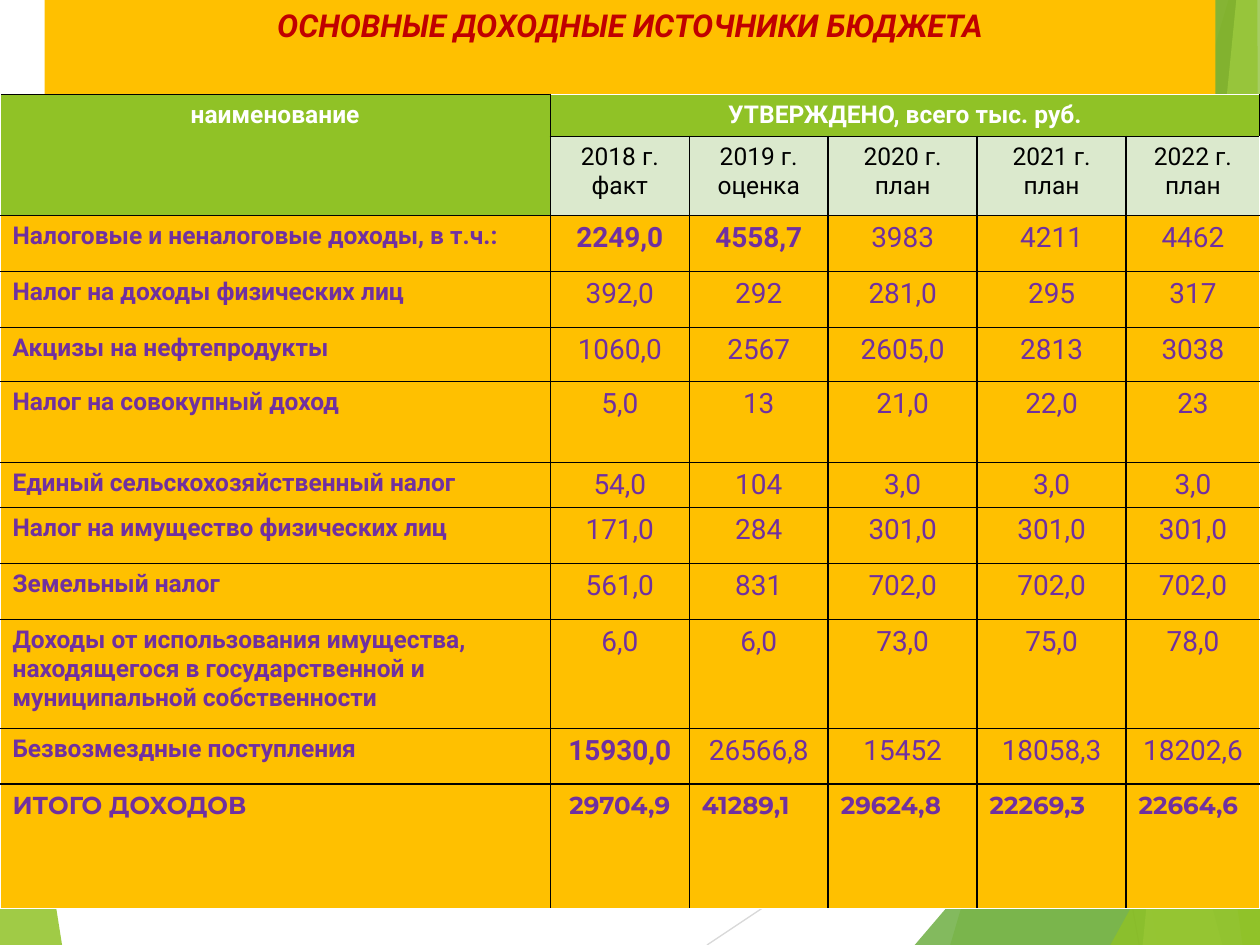
from dataclasses import dataclass

from lxml import etree
from pptx import Presentation
from pptx import util as u
from pptx.dml.color import RGBColor
from pptx.enum import shapes, text
from pptx.oxml.ns import qn


@dataclass(frozen=True)
class Theme:
    green: str = "90C226"
    forest: str = "54A021"
    dark_green: str = "3F7819"
    lime: str = "C0E474"
    pale_green: str = "DBE9CD"
    amber: str = "FFC000"
    red: str = "C00000"
    purple: str = "7030A0"
    black: str = "000000"
    white: str = "FFFFFF"
    light_grey: str = "D9D9D9"
    grey: str = "BFBFBF"
    font: str = "Roboto"
    total_font: str = "Montserrat"
    title_size: float = 18
    label_size: float = 14
    value_size: float = 16


CENTER, LEFT = text.PP_ALIGN.CENTER, text.PP_ALIGN.LEFT


class SlideBuilder:
    def __init__(self, slide, theme):
        self.slide = slide
        self.theme = theme

    def paint(self, fill, color, alpha=100):
        fill.solid()
        fill.fore_color.rgb = RGBColor.from_string(color)
        if alpha < 100:
            color_node = fill._xPr.find(qn("a:solidFill"))[0]
            etree.SubElement(color_node, qn("a:alpha"), val=str(alpha * 1000))

    def add_label(self, frame, content, color, align=CENTER, **formats):
        paragraph = frame.paragraphs[0]
        paragraph.alignment = align
        run = paragraph.add_run()
        run.text = content
        run.font.color.rgb = RGBColor.from_string(color)
        values = {"name": self.theme.font, "size": self.theme.label_size, "bold": True}
        values.update(formats)
        values["size"] = u.Pt(values["size"])
        for name, value in values.items():
            setattr(run.font, name, value)

    def facet(self, points, color, alpha):
        corners = [(u.Pt(x), u.Pt(y)) for x, y in points]
        builder = self.slide.shapes.build_freeform(*corners[0], scale=1.0)
        builder.add_line_segments(corners[1:], close=True)
        shape = builder.convert_to_shape()
        shape.shadow.inherit = False
        shape.line.fill.background()
        self.paint(shape.fill, color, alpha)

    def line(self, start, end, color):
        ends = [u.Pt(value) for value in (*start, *end)]
        connector = self.slide.shapes.add_connector(shapes.MSO_CONNECTOR.STRAIGHT, *ends)
        connector.line.color.rgb = RGBColor.from_string(color)
        connector.line.width = u.Pt(0.75)
        etree.SubElement(connector._element.spPr, qn("a:effectLst"))

    def title(self, content, *box):
        shape = self.slide.shapes.add_shape(
            shapes.MSO_SHAPE.RECTANGLE, *[u.Pt(value) for value in box])
        shape.shadow.inherit = False
        shape.line.fill.background()
        self.paint(shape.fill, self.theme.amber)
        shape.text_frame.word_wrap = True
        shape.text_frame.vertical_anchor = text.MSO_ANCHOR.TOP
        self.add_label(shape.text_frame, content, self.theme.red,
                       size=self.theme.title_size, italic=True)

    def table(self, left, top, widths, heights):
        frame = self.slide.shapes.add_table(
            len(heights), len(widths), u.Pt(left), u.Pt(top),
            u.Pt(sum(widths)), u.Pt(sum(heights)))
        table = frame.table
        table.first_row = table.horz_banding = False
        for column, width in zip(table.columns, widths):
            column.width = u.Pt(width)
        for row, height in zip(table.rows, heights):
            row.height = u.Pt(height)
        return table

    def borders(self, cell, colors):
        for side, color in colors.items():
            line = etree.SubElement(cell._tc.get_or_add_tcPr(), qn(f"a:ln{side}"),
                                    w=str(u.Pt(1)))
            fill = etree.SubElement(line, qn("a:solidFill"))
            etree.SubElement(fill, qn("a:srgbClr"), val=color)

    def cell(self, cell, content, fill, color, align=CENTER, **formats):
        self.paint(cell.fill, fill)
        self.add_label(cell.text_frame, content, color, align, **formats)


# Row label, values, number of leading bold values, row height
INCOME = [
    ("Налоговые и неналоговые доходы, в т.ч.:", "2249,0 4558,7 3983 4211 4462", 2, 32),
    ("Налог на доходы физических лиц", "392,0 292 281,0 295 317", 0, 32),
    ("Акцизы на нефтепродукты", "1060,0 2567 2605,0 2813 3038", 0, 31),
    ("Налог на совокупный доход", "5,0 13 21,0 22,0 23", 0, 46.2),
    ("Единый сельскохозяйственный налог", "54,0 104 3,0 3,0 3,0", 0, 25.2),
    ("Налог на имущество физических лиц", "171,0 284 301,0 301,0 301,0", 0, 32),
    ("Земельный налог", "561,0 831 702,0 702,0 702,0", 0, 32),
    ("Доходы от использования имущества, находящегося в государственной "
     "и муниципальной собственности", "6,0 6,0 73,0 75,0 78,0", 0, 62.2),
    ("Безвозмездные поступления", "15930,0 26566,8 15452 18058,3 18202,6", 1, 32),
]
TOTALS = "29704,9 41289,1 29624,8 22269,3 22664,6"
YEARS = ["2018 г. факт", "2019 г. оценка", "2020 г. план", "2021 г. план", "2022 г. план"]


def add_background(builder):
    theme = builder.theme
    builder.facet([(0, 316), (35.5, 540), (0, 540)], theme.green, 85)
    builder.line((404, 540), (720, 329.3), theme.light_grey)
    builder.line((554.5, 0), (651, 540), theme.grey)
    facets = [
        ([(702, 0), (543, 540), (720, 540), (720, 0)], theme.green, 30),
        ([(567.5, 0), (661.5, 540), (720, 540), (720, 0)], theme.green, 20),
        ([(522.7, 540), (720, 309), (720, 540)], theme.forest, 72),
        ([(552.5, 0), (698.5, 540), (720, 540), (720, 0)], theme.dark_green, 70),
        ([(706.5, 0), (653, 540), (720, 540), (720, 0)], theme.lime, 70),
        ([(636, 0), (710, 540), (720, 540), (718.5, 0)], theme.green, 65),
        ([(634.5, 540), (720, 385.2), (720, 540)], theme.green, 80),
    ]
    for facet in facets:
        builder.facet(*facet)


def add_income_table(builder):
    theme = builder.theme
    heights = [23.4, 45.2, *[row[3] for row in INCOME], 71]
    widths = [314.5, 79.4, 79.4, 85.1, 85.1, 76.5]
    table = builder.table(0, 54.1, widths, heights)
    last_row, last_column = len(heights) - 1, len(widths) - 1

    # White outer edges, black inner rules
    for row in range(len(heights)):
        for column in range(len(widths)):
            white = {"L": column == 0, "R": column == last_column,
                     "T": row == 0 and column > 0, "B": row == last_row}
            builder.borders(table.cell(row, column), {
                side: theme.white if edge else theme.black for side, edge in white.items()})

    # Header
    table.cell(0, 0).merge(table.cell(1, 0))
    table.cell(0, 1).merge(table.cell(0, last_column))
    for column, heading in enumerate(["наименование", "УТВЕРЖДЕНО, всего тыс. руб."]):
        builder.cell(table.cell(0, column), heading, theme.green, theme.white)
    for column, year in enumerate(YEARS, 1):
        builder.cell(table.cell(1, column), year, theme.pale_green, theme.black, bold=False)

    # Income rows
    for row, (label, values, bold_count, _) in enumerate(INCOME, 2):
        builder.cell(table.cell(row, 0), label, theme.amber, theme.purple, LEFT)
        for column, value in enumerate(values.split(), 1):
            builder.cell(table.cell(row, column), value, theme.amber, theme.purple,
                         size=theme.value_size, bold=column <= bold_count)

    # Totals
    for column, value in enumerate(["ИТОГО ДОХОДОВ", *TOTALS.split()]):
        builder.cell(table.cell(last_row, column), value, theme.amber, theme.purple,
                     CENTER if column == 1 else LEFT, name=theme.total_font)


def main():
    presentation = Presentation()
    presentation.slide_width, presentation.slide_height = u.Pt(720), u.Pt(540)
    slide = presentation.slides.add_slide(presentation.slide_layouts[6])
    builder = SlideBuilder(slide, Theme())
    add_background(builder)
    builder.title("ОСНОВНЫЕ ДОХОДНЫЕ ИСТОЧНИКИ БЮДЖЕТА", 25.5, 0, 669, 54)
    add_income_table(builder)
    presentation.save("out.pptx")


if __name__ == "__main__":
    main()
